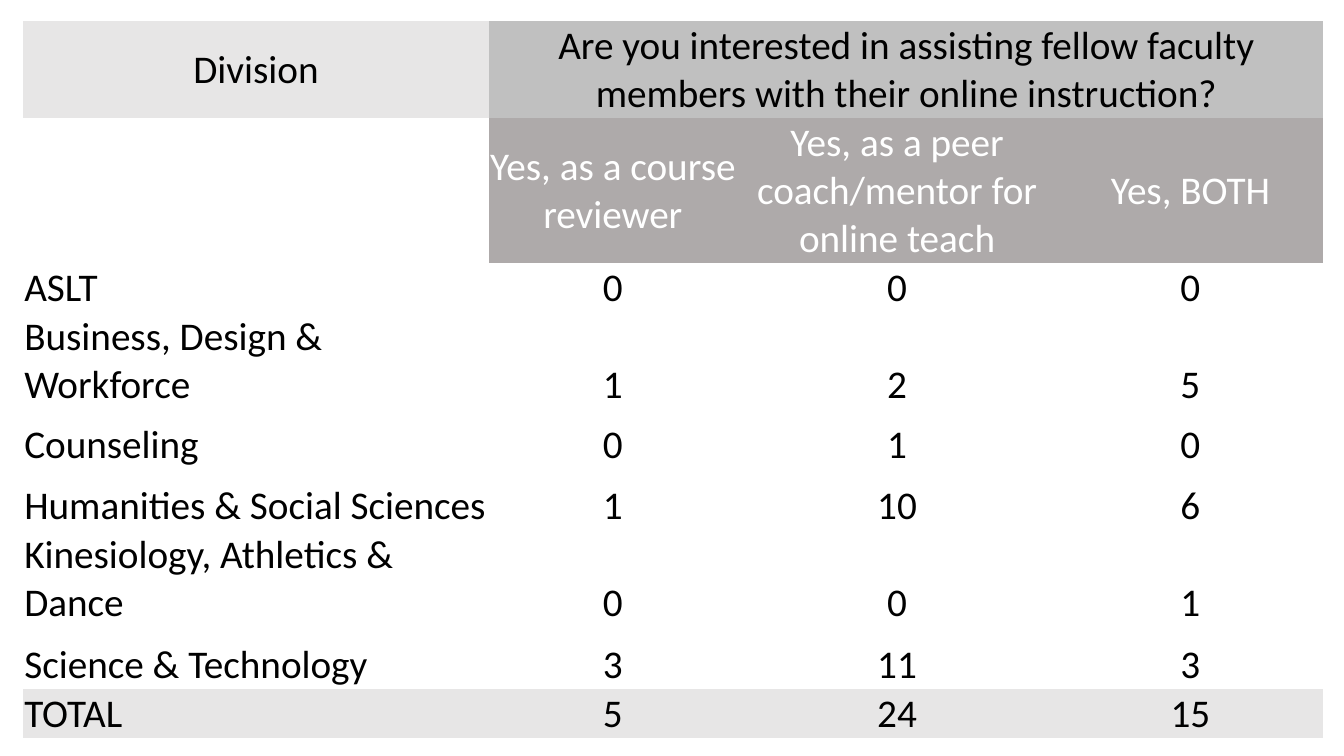
from pptx import Presentation
from pptx.dml.color import RGBColor
from pptx.enum import text
from pptx.oxml import ns
from pptx.util import Pt

LIGHT, MIDDLE, DARK = "E7E6E6", "C0C0C0", "AEAAAA"
BLACK, WHITE = "000000", "FFFFFF"
PLAIN_TABLE_STYLE = "{2D5ABB26-0587-4C30-8999-92F81FD0307C}"

COLUMN_WIDTHS = [332.6, 177.1, 229, 190.1]
ROW_HEIGHTS = [65.5, 91.4, 23.8, 43.9, 43.2, 43.9, 65.5, 43.9, 23.8]

QUESTION = "Are you interested in assisting fellow faculty members with their online instruction?"
ANSWERS = ["Yes, as a course reviewer",
           "Yes, as a peer coach/mentor for online teach",
           "Yes, BOTH"]
DIVISIONS = [
    ("ASLT", 0, 0, 0),
    ("Business, Design & Workforce", 1, 2, 5),
    ("Counseling", 0, 1, 0),
    ("Humanities & Social Sciences", 1, 10, 6),
    ("Kinesiology, Athletics & Dance", 0, 0, 1),
    ("Science & Technology", 3, 11, 3),
    ("TOTAL", 5, 24, 15),
]


def color(value):
    return RGBColor.from_string(value)


def fill_cell(cell, words, fill=None, font_color=BLACK, centered=True, anchor="BOTTOM"):
    cell.margin_left = cell.margin_right = cell.margin_top = Pt(0.75)
    cell.margin_bottom = 0
    cell.vertical_anchor = text.MSO_ANCHOR[anchor]
    if fill:
        cell.fill.solid()
        cell.fill.fore_color.rgb = color(fill)
    else:
        cell.fill.background()
    if not words:
        return
    paragraph = cell.text_frame.paragraphs[0]
    paragraph.alignment = text.PP_ALIGN.CENTER if centered else text.PP_ALIGN.LEFT
    run = paragraph.add_run()
    run.text = words
    run.font.name = "Calibri"
    run.font.size = Pt(28)
    run.font.color.rgb = color(font_color)


def add_survey_table(slide, left, top):
    frame = slide.shapes.add_table(len(ROW_HEIGHTS), len(COLUMN_WIDTHS), Pt(left), Pt(top),
                                   Pt(sum(COLUMN_WIDTHS)), Pt(sum(ROW_HEIGHTS)))
    table = frame.table
    table.first_row = table.horz_banding = False
    next(frame._element.iter(ns.qn("a:tableStyleId"))).text = PLAIN_TABLE_STYLE
    for column, width in zip(table.columns, COLUMN_WIDTHS):
        column.width = Pt(width)
    for row, height in zip(table.rows, ROW_HEIGHTS):
        row.height = Pt(height)

    # Question and answer headings
    table.cell(0, 1).merge(table.cell(0, 3))
    fill_cell(table.cell(0, 0), "Division", LIGHT, anchor="MIDDLE")
    fill_cell(table.cell(0, 1), QUESTION, MIDDLE)
    fill_cell(table.cell(1, 0), "")
    for column, answer in enumerate(ANSWERS, 1):
        fill_cell(table.cell(1, column), answer, DARK, WHITE, anchor="MIDDLE")

    # Counts for each division, then the total
    for row, values in enumerate(DIVISIONS, 2):
        fill = LIGHT if values[0] == "TOTAL" else None
        for column, value in enumerate(values):
            fill_cell(table.cell(row, column), str(value), fill, centered=column > 0)


def main():
    presentation = Presentation()
    presentation.slide_width, presentation.slide_height = Pt(960), Pt(540)
    slide = presentation.slides.add_slide(presentation.slide_layouts[6])
    add_survey_table(slide, 16.6, 15.1)
    presentation.save("out.pptx")


if __name__ == "__main__":
    main()
